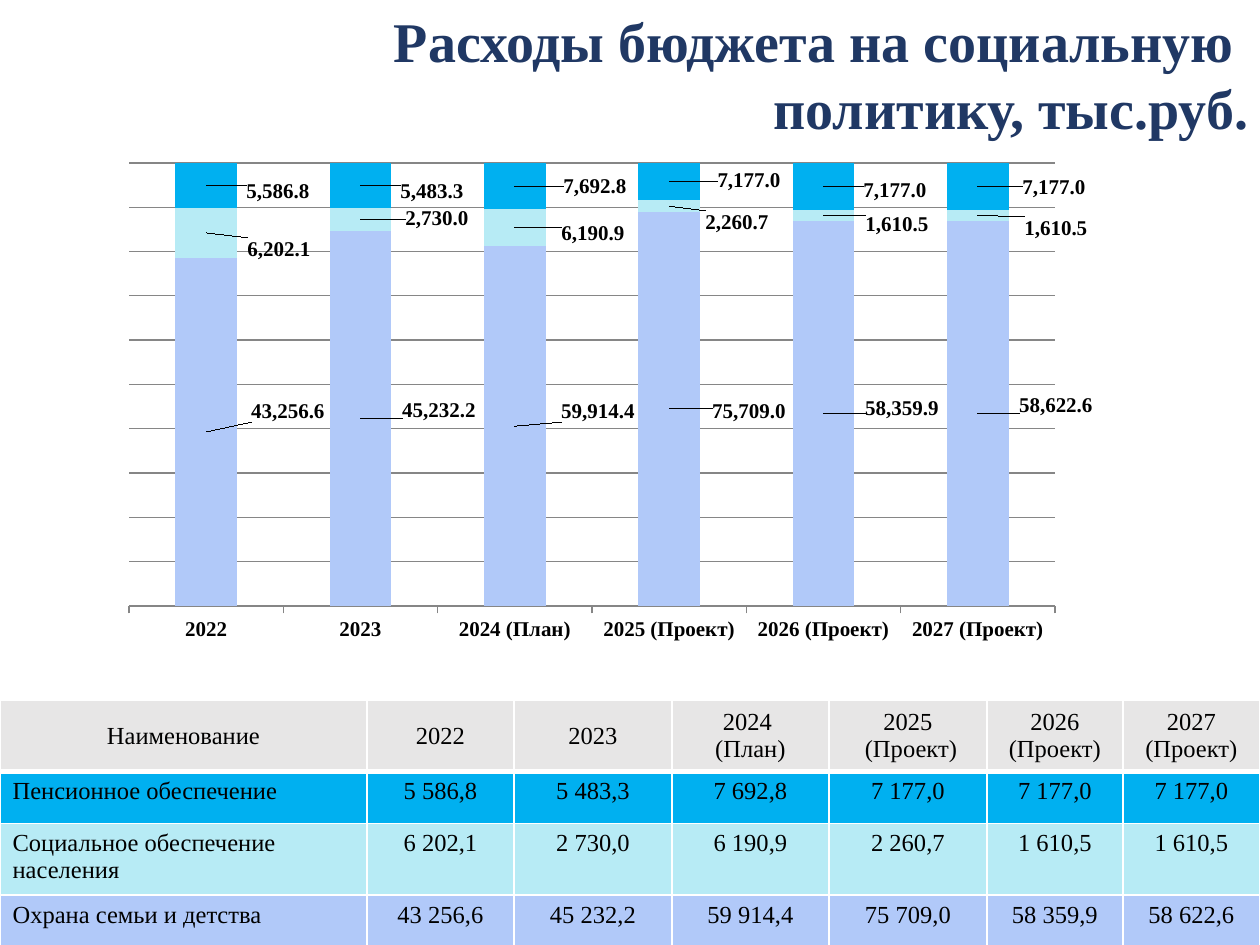
"""Slide with social policy spending: title, stacked chart and table."""
from pptx import Presentation
from pptx.chart.data import CategoryChartData
from pptx.dml.color import RGBColor
from pptx.enum import chart as ce, text as te
from pptx.oxml import parse_xml
from pptx.oxml.ns import nsdecls, qn
from pptx.util import Pt

PX = 914400 / 126
FACE = "Times New Roman"
HUES = {"title": "203864", "head": "E7E6E6", "pension": "00B0F0", "social": "B7EBF5",
        "family": "B1C9F9", "black": "000000", "white": "FFFFFF", "grid": "868686"}
TITLE = ["Расходы бюджета на социальную ", "политику, тыс.руб."]
CATS = ["2022", "2023", "2024 (План)", "2025 (Проект)", "2026 (Проект)", "2027 (Проект)"]
HEAD = ["Наименование", "2022", "2023", "2024  (План)", "2025\n (Проект)",
        "2026 (Проект)", "2027\n(Проект)"]
ROWS = [
    ("pension", "Пенсионное обеспечение", [5586.8, 5483.3, 7692.8, 7177, 7177, 7177]),
    ("social", "Социальное обеспечение населения",
     [6202.1, 2730, 6190.9, 2260.7, 1610.5, 1610.5]),
    ("family", "Охрана семьи и детства",
     [43256.6, 45232.2, 59914.4, 75709, 58359.9, 58622.6]),
]
SPOTS = {
    "pension": [(278, 191), (432, 191), (595, 186), (749, 180), (895, 190), (1054, 187)],
    "social": [(279, 249), (437, 218), (593, 233), (737, 222), (897, 224), (1056, 228)],
    "family": [(288, 411), (439, 410), (598, 411), (749, 411), (902, 408), (1056, 405)],
}
TITLE_BOX = (-34, 0, 1295, 149)
CHART_BOX = (1, 160, 1260, 559)
PLOT_BOX = (129, 163, 926, 443)
COLS = [367, 147, 158, 157, 158, 136, 137]
TALL = [70, 52, 71, 51]
TABLE_TOP = 700


def emu(*vals):
    return [round(v * PX) for v in vals]


def rgb(key):
    return RGBColor.from_string(HUES[key])


def style(font, size, hue="black", bold=False):
    for key, val in {"name": FACE, "size": Pt(size), "bold": bold}.items():
        setattr(font, key, val)
    font.color.rgb = rgb(hue)


def write(frame, lines, align, **look):
    for i, line in enumerate(lines):
        para = frame.paragraphs[0] if i == 0 else frame.add_paragraph()
        para.alignment = align
        run = para.add_run()
        run.text = line
        style(run.font, **look)


def layout(x, y, w=None, h=None):
    size = "" if w is None else f'<c:w val="{w:.4f}"/><c:h val="{h:.4f}"/>'
    mode = "" if w is None else ('<c:layoutTarget val="inner"/><c:xMode val="edge"/>'
                                 '<c:yMode val="edge"/>')
    return parse_xml(f'<c:layout {nsdecls("c")}><c:manualLayout>{mode}<c:x val="{x:.4f}"/>'
                     f'<c:y val="{y:.4f}"/>{size}</c:manualLayout></c:layout>')


def add_title(slide):
    frame = slide.shapes.add_textbox(*emu(*TITLE_BOX)).text_frame
    frame.word_wrap = True
    write(frame, TITLE, te.PP_ALIGN.RIGHT, size=32, hue="title", bold=True)


def add_labels(ser, key, vals, low, sums):
    left, top, wide, high = PLOT_BOX
    labs = ser.data_labels
    labs.show_value = True
    labs.number_format = "#,##0.0"
    labs.number_format_is_linked = False
    style(labs.font, 12, bold=True)
    for i, (x, y) in enumerate(SPOTS[key]):
        style(ser.points[i].data_label.font, 12, bold=True)
        mid_x = left + wide * (i + 0.5) / len(CATS)
        mid_y = top + high * (1 - (low[i] + vals[i] / 2) / sums[i])
        node = labs._element.findall(qn("c:dLbl"))[i]
        node.insert(1, layout((x - mid_x) / CHART_BOX[2], (y - mid_y) / CHART_BOX[3]))
        node.insert(2, parse_xml(f'<c:numFmt {nsdecls("c")} formatCode="#,##0.0" '
                                 'sourceLinked="0"/>'))


def add_chart(slide):
    data = CategoryChartData(number_format="#,##0.0")
    data.categories = CATS
    stack = ROWS[::-1]
    for key, name, vals in stack:
        data.add_series(name, vals)
    chart = slide.shapes.add_chart(ce.XL_CHART_TYPE.COLUMN_STACKED_100,
                                   *emu(*CHART_BOX), data).chart
    chart.has_legend = chart.has_title = False
    style(chart.font, 12)
    plot = chart.plots[0]
    for key, val in {"gap_width": 150, "overlap": 100, "vary_by_categories": False}.items():
        setattr(plot, key, val)
    cat, axis = chart.category_axis, chart.value_axis
    style(cat.tick_labels.font, 12, bold=True)
    axis.visible = False
    axis.has_major_gridlines = True
    for line in (cat.format.line, axis.major_gridlines.format.line):
        line.color.rgb = rgb("grid")
        line.width = Pt(0.75)
    sums = [sum(col) for col in zip(*(row[2] for row in ROWS))]
    low = [0] * len(CATS)
    for ser, (key, name, vals) in zip(plot.series, stack):
        ser.format.fill.solid()
        ser.format.fill.fore_color.rgb = rgb(key)
        add_labels(ser, key, vals, low, sums)
        low = [a + b for a, b in zip(low, vals)]
    area = chart._chartSpace.chart.plotArea
    for old in area.findall(qn("c:layout")):
        area.remove(old)
    left, top, wide, high = CHART_BOX
    x, y, w, h = PLOT_BOX
    area.insert(0, layout((x - left) / wide, (y - top) / high, w / wide, h / high))


def paint(cell, hue, base):
    tag = cell._tc.get_or_add_tcPr()
    for side in "LRTB":
        width = Pt(base if side == "B" else 1)
        tag.append(parse_xml(f'<a:ln{side} {nsdecls("a")} w="{width}"><a:solidFill>'
                             f'<a:srgbClr val="{HUES["white"]}"/></a:solidFill></a:ln{side}>'))
    cell.fill.solid()
    cell.fill.fore_color.rgb = rgb(hue)


def add_table(slide):
    grid = [("head", HEAD)]
    for key, name, vals in ROWS:
        nums = [f"{v:,.1f}".replace(",", " ").replace(".", ",") for v in vals]
        grid.append((key, [name] + nums))
    table = slide.shapes.add_table(len(grid), len(COLS),
                                   *emu(0, TABLE_TOP, sum(COLS), sum(TALL))).table
    table.first_row = table.horz_banding = False
    for col, wide in zip(table.columns, emu(*COLS)):
        col.width = wide
    for r, (key, cells) in enumerate(grid):
        table.rows[r].height = emu(TALL[r])[0]
        for c, words in enumerate(cells):
            cell = table.cell(r, c)
            paint(cell, key, 3 if r == 0 else 1)
            cell.vertical_anchor = te.MSO_ANCHOR.MIDDLE if r == 0 else te.MSO_ANCHOR.TOP
            align = te.PP_ALIGN.LEFT if r and c == 0 else te.PP_ALIGN.CENTER
            write(cell.text_frame, words.split("\n"), align, size=14)


def main():
    deck = Presentation()
    deck.slide_width, deck.slide_height = emu(1260, 945)
    slide = deck.slides.add_slide(deck.slide_layouts[6])
    add_title(slide)
    add_table(slide)
    add_chart(slide)
    deck.save("out.pptx")


if __name__ == "__main__":
    main()
